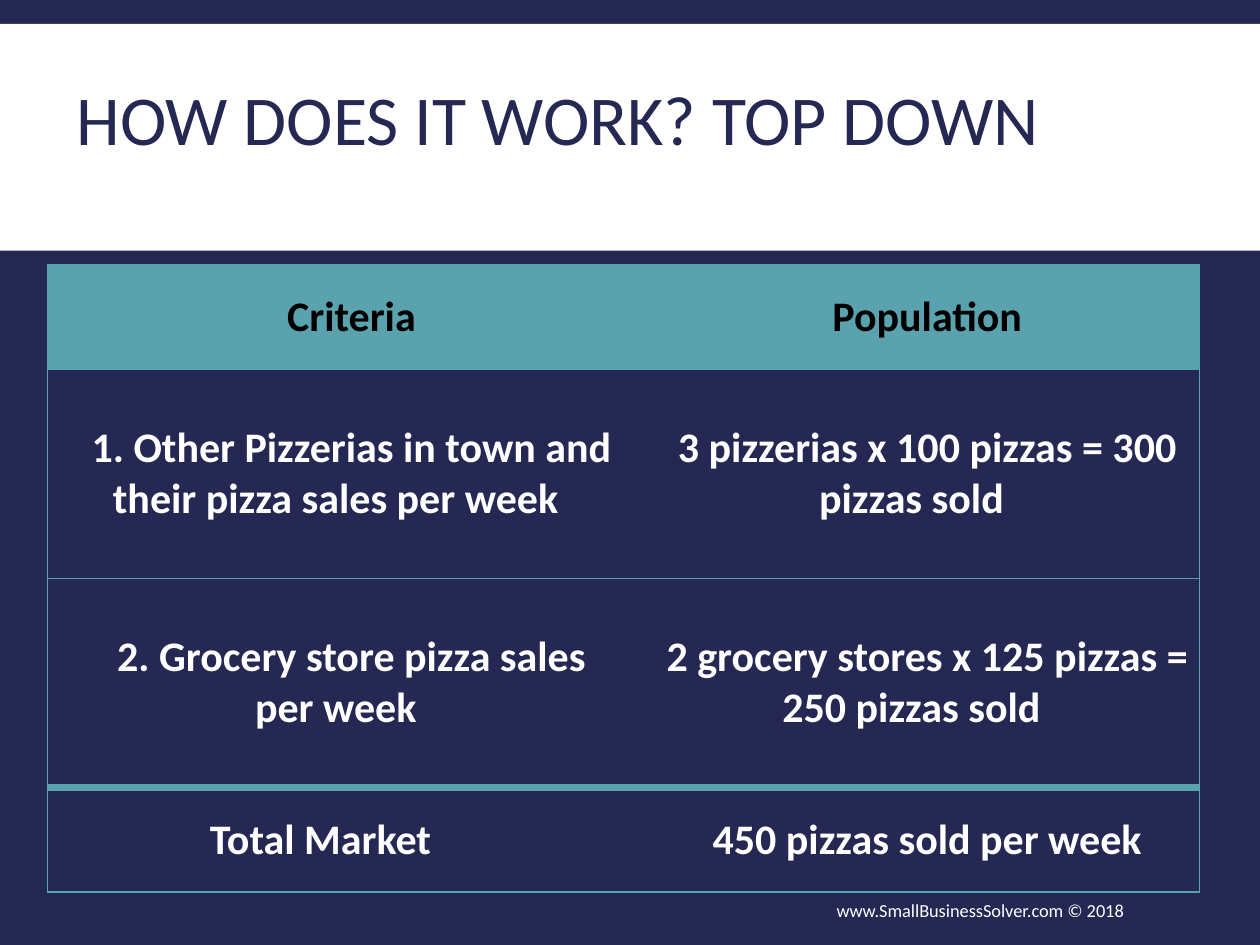
from typing import NamedTuple

from lxml.etree import SubElement
from pptx import Presentation
from pptx.dml.color import RGBColor
from pptx.enum.shapes import MSO_SHAPE
from pptx.enum.text import MSO_ANCHOR, PP_ALIGN
from pptx.oxml.ns import qn
from pptx.util import Inches, Pt

NAVY, TEAL, WHITE, BLACK = "242852", "5AA2AE", "FFFFFF", "000000"
THIN, THICK = 0.75, 4


class MarketRow(NamedTuple):
    """One table row with its look and the width of its top rule."""

    criteria: str
    population: str
    height: float
    top_rule: float = THIN
    text_color: str = WHITE
    fill: str | None = None


ROWS = [
    MarketRow("Criteria", "Population", 0.83, text_color=BLACK, fill=TEAL),
    MarketRow("1. Other Pizzerias in town and their pizza sales per week",
              "3 pizzerias x 100 pizzas = 300 pizzas sold", 1.66),
    MarketRow("2. Grocery store pizza sales per week",
              "2 grocery stores x 125 pizzas = 250 pizzas sold", 1.66),
    MarketRow("Total Market\t", "450 pizzas sold per week", 0.83, top_rule=THICK),
]


def color(value: str) -> RGBColor:
    """Turn a hex string into a colour."""
    return RGBColor.from_string(value)


def write(frame, text: str, *, size: float, text_color: str, bold=False,
          align=PP_ALIGN.LEFT, line_spacing=1.0, first_indent=0.0) -> None:
    """Write one formatted paragraph into a text frame."""
    frame.word_wrap = True
    paragraph = frame.paragraphs[0]
    paragraph.alignment = align
    paragraph.line_spacing = line_spacing
    if first_indent:
        properties = paragraph._p.get_or_add_pPr()
        properties.set("marL", "0")
        properties.set("indent", str(Inches(first_indent)))
    run = paragraph.add_run()
    run.text = text
    run.font.name = "Calibri"
    run.font.size = Pt(size)
    run.font.bold = bold
    run.font.color.rgb = color(text_color)


def add_text(slide, left: float, top: float, width: float, height: float,
             text: str, **text_format) -> None:
    """Add a vertically centred text box."""
    box = slide.shapes.add_textbox(Inches(left), Inches(top), Inches(width), Inches(height))
    box.text_frame.vertical_anchor = MSO_ANCHOR.MIDDLE
    write(box.text_frame, text, **text_format)


def set_borders(cell, widths: dict[str, float]) -> None:
    """Draw the given sides of a cell and hide the sides of zero width."""
    properties = cell._tc.get_or_add_tcPr()
    for side in ("L", "R", "T", "B"):
        width = widths[side]
        line = SubElement(properties, qn(f"a:ln{side}"), w=str(Pt(width)))
        if width:
            fill = SubElement(line, qn("a:solidFill"))
            SubElement(fill, qn("a:srgbClr"), val=TEAL)
        else:
            SubElement(line, qn("a:noFill"))


def add_market_table(slide, rows: list[MarketRow]) -> None:
    """Add the table that adds up the market."""
    height = sum(row.height for row in rows)
    table = slide.shapes.add_table(
        len(rows), 2, Inches(0.38), Inches(2.1), Inches(9.14), Inches(height)).table
    table.first_row = table.horz_banding = False
    bottom_rules = [row.top_rule for row in rows[1:]] + [THIN]
    for index, (row, bottom_rule) in enumerate(zip(rows, bottom_rules)):
        table.rows[index].height = Inches(row.height)
        for column, text in enumerate((row.criteria, row.population)):
            cell = table.cell(index, column)
            cell.vertical_anchor = MSO_ANCHOR.MIDDLE
            cell.margin_left = cell.margin_right = Inches(0.07)
            cell.margin_top = cell.margin_bottom = 0
            set_borders(cell, {"L": 0 if column else THIN, "R": THIN if column else 0,
                               "T": row.top_rule, "B": bottom_rule})
            if row.fill:
                cell.fill.solid()
                cell.fill.fore_color.rgb = color(row.fill)
            else:
                cell.fill.background()
            write(cell.text_frame, text, size=24, text_color=row.text_color, bold=True,
                  align=PP_ALIGN.CENTER, first_indent=0.25)


def main() -> None:
    """Build the slide and save it."""
    presentation = Presentation()
    presentation.slide_width, presentation.slide_height = Inches(10), Inches(7.5)
    slide = presentation.slides.add_slide(presentation.slide_layouts[6])
    slide.background.fill.solid()
    slide.background.fill.fore_color.rgb = color(NAVY)

    band = slide.shapes.add_shape(
        MSO_SHAPE.RECTANGLE, 0, Inches(0.19), Inches(10), Inches(1.8))
    band.shadow.inherit = False
    band.fill.solid()
    band.fill.fore_color.rgb = color(WHITE)
    band.line.fill.background()

    add_text(slide, 0.51, 0.36, 9, 1.25, "HOW DOES IT WORK? TOP DOWN",
             size=40, text_color=NAVY, line_spacing=0.85)
    add_market_table(slide, ROWS)
    add_text(slide, 4.58, 7.02, 4.44, 0.4, "www.SmallBusinessSolver.com © 2018",
             size=10.5, text_color=WHITE, align=PP_ALIGN.RIGHT)
    presentation.save("out.pptx")


if __name__ == "__main__":
    main()
